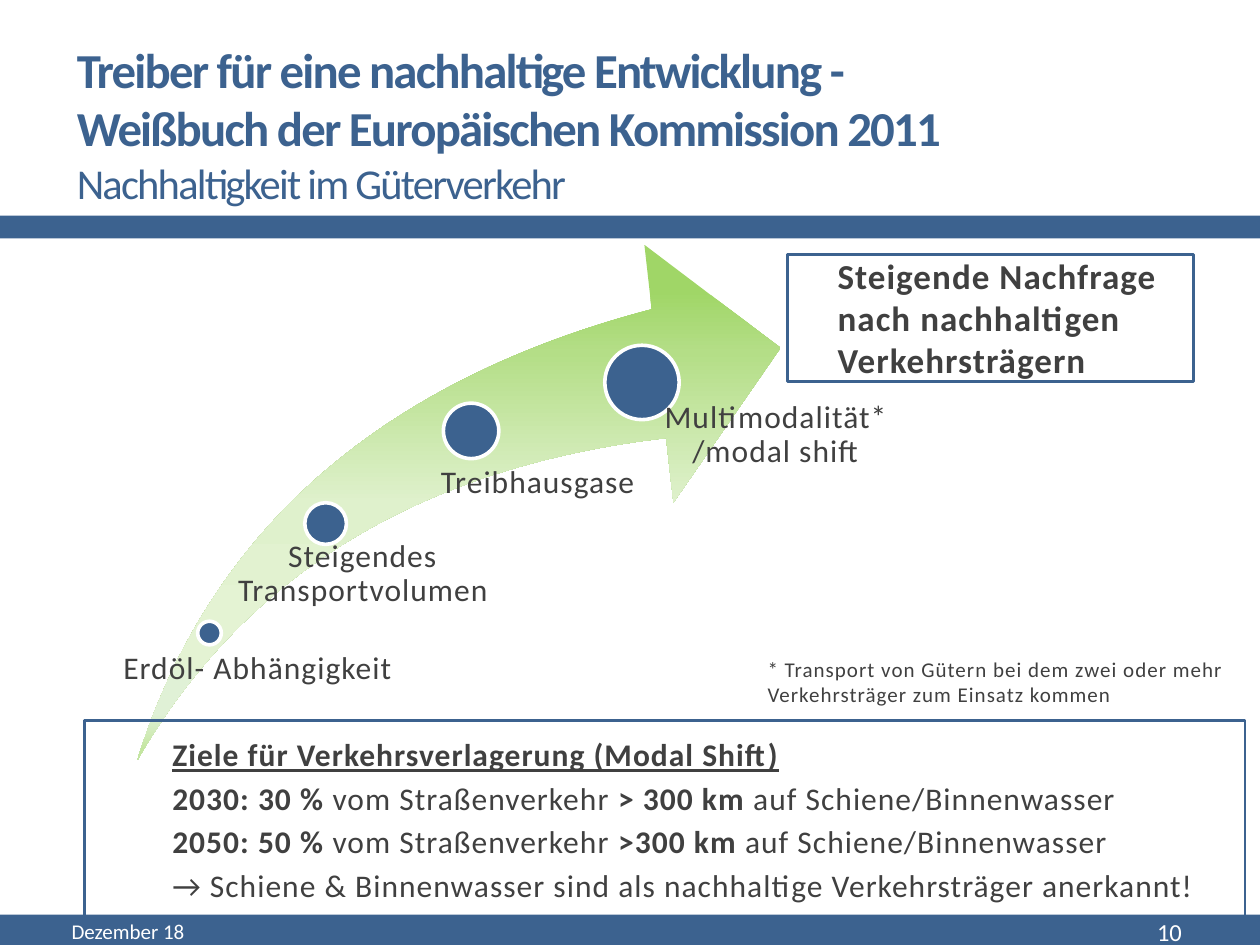
import pptx
import pptx.dml.color
import pptx.enum.shapes
import pptx.enum.text
import pptx.oxml
import pptx.oxml.ns
import pptx.util

Pt = pptx.util.Pt
RGBColor = pptx.dml.color.RGBColor
SHAPE = pptx.enum.shapes.MSO_SHAPE
ALIGN = pptx.enum.text.PP_ALIGN
ANCHOR = pptx.enum.text.MSO_ANCHOR

BLUE = RGBColor(0x3C, 0x62, 0x8F)
GREY = RGBColor(0x40, 0x40, 0x40)
WHITE = RGBColor(0xFF, 0xFF, 0xFF)
SWOOSH_STOPS = [
    (9, RGBColor(0xA0, 0xD6, 0x67)),
    (21, RGBColor(0xB4, 0xDE, 0x87)),
    (50, RGBColor(0xDF, 0xF1, 0xCC)),
    (74, RGBColor(0xE4, 0xF3, 0xD3)),
    (91, RGBColor(0xE0, 0xF1, 0xD6)),
    (98, RGBColor(0xC4, 0xE6, 0xA0)),
]

DRIVERS = [
    ((113, 355, 13.5), (63.4, 373, 224, 89), 7.2, ALIGN.LEFT, "Erdöl- Abhängigkeit"),
    ((174.2, 287.3, 23.8), (108.7, 308.9, 184.3, 172), 13, ALIGN.CENTER,
     "Steigendes Transportvolumen"),
    ((253.4, 230.4, 31.7), (219.6, 266.4, 163.4, 232.6), 16.6, ALIGN.CENTER,
     "Treibhausgase "),
    ((345.6, 197.3, 42.5), (345.6, 229, 173.5, 270), 22.3, ALIGN.CENTER,
     "Multimodalität*\n/modal shift"),
]

GOALS = [
    [("Ziele für Verkehrsverlagerung (Modal Shift)", {"bold": True, "underline": True})],
    [("2030: 30 % ", {"bold": True}), ("vom Straßenverkehr ", {}),
     ("> 300 km ", {"bold": True}), ("auf Schiene/Binnenwasser", {})],
    [("2050: 50 % ", {"bold": True}), ("vom Straßenverkehr ", {}),
     (">300 km ", {"bold": True}), ("auf Schiene/Binnenwasser", {})],
    [("→ Schiene & Binnenwasser sind als nachhaltige Verkehrsträger anerkannt!", {})],
]


def add_run(paragraph, text, size=18, color=GREY, bold=False, underline=False, tracking=0.6):
    for index, line in enumerate(text.split("\n")):
        if index:
            paragraph.add_line_break()
        if not line:
            continue
        run = paragraph.add_run()
        run.text = line
        run.font.name = "Calibri"
        run.font.size = Pt(size)
        run.font.bold = bold
        run.font.underline = underline
        run.font.color.rgb = color
        run.font._element.set("spc", str(round(tracking * 100)))


def write_text(frame, paragraphs, align=ALIGN.LEFT, anchor=ANCHOR.MIDDLE, level=0,
               indent=0, before=0, after=0, line_spacing=1.0, **font):
    frame.word_wrap = True
    frame.auto_size = pptx.enum.text.MSO_AUTO_SIZE.NONE
    frame.vertical_anchor = anchor
    for index, runs in enumerate(paragraphs):
        paragraph = frame.add_paragraph() if index else frame.paragraphs[0]
        paragraph.alignment = align
        paragraph.level = level
        paragraph.space_before = Pt(before)
        paragraph.space_after = Pt(after)
        paragraph.line_spacing = line_spacing
        properties = paragraph._p.get_or_add_pPr()
        properties.set("marL", str(Pt(indent)))
        properties.set("indent", "0")
        for text, emphasis in runs:
            add_run(paragraph, text, **{**font, **emphasis})


def add_text(slide, box, text, insets=None, **text_format):
    frame = slide.shapes.add_textbox(*map(Pt, box)).text_frame
    if insets:
        (frame.margin_left, frame.margin_top,
         frame.margin_right, frame.margin_bottom) = map(Pt, insets)
    write_text(frame, [[(text, {})]], **text_format)


def add_shape(slide, kind, box, fill=None, line=None, line_width=1.5):
    shape = slide.shapes.add_shape(kind, *map(Pt, box))
    shape.shadow.inherit = False
    if fill is None:
        shape.fill.background()
    else:
        shape.fill.solid()
        shape.fill.fore_color.rgb = fill
    if line is None:
        shape.line.fill.background()
    else:
        shape.line.color.rgb = line
        shape.line.width = Pt(line_width)
    return shape


def add_swoosh(slide, box):
    swoosh = add_shape(slide, SHAPE.SWOOSH_ARROW, box)
    swoosh.adjustments[0] = 0.25
    swoosh.adjustments[1] = 0.25
    swoosh.fill.gradient()
    swoosh.fill.gradient_angle = 270
    stops = swoosh._element.spPr.find(".//" + pptx.oxml.ns.qn("a:gsLst"))
    for stop in list(stops):
        stops.remove(stop)
    for position, color in SWOOSH_STOPS:
        stops.append(pptx.oxml.parse_xml(
            f'<a:gs {pptx.oxml.ns.nsdecls("a")} pos="{position * 1000}">'
            f'<a:srgbClr val="{color}"/></a:gs>'))


def add_driver(slide, dot, box, inset, align, label):
    left, top, diameter = dot
    add_shape(slide, SHAPE.OVAL, (left, top, diameter, diameter), BLUE, WHITE, 2.08)
    add_text(slide, box, label, insets=(inset, 0, 0, 0), align=align,
             anchor=ANCHOR.TOP, line_spacing=0.9, after=6.3)


def add_title(slide, box):
    title = slide.shapes.title
    title.left, title.top, title.width, title.height = map(Pt, box)
    heading = ("Treiber für eine nachhaltige Entwicklung -\n"
               "Weißbuch der Europäischen Kommission 2011\n")
    write_text(title.text_frame,
               [[(heading, {"size": 27.9, "bold": True}),
                 ("Nachhaltigkeit im Güterverkehr", {"size": 24.3})]],
               color=BLUE, tracking=-1)


def main():
    presentation = pptx.Presentation()
    presentation.slide_width = Pt(720)
    presentation.slide_height = Pt(540)
    slide = presentation.slides.add_slide(presentation.slide_layouts[5])

    add_shape(slide, SHAPE.RECTANGLE, (-3, 522.7, 731.5, 36), BLUE)
    add_shape(slide, SHAPE.RECTANGLE, (-1.5, 123.2, 728.6, 13), BLUE)
    add_title(slide, (36.7, 31.7, 692, 77.8))

    add_swoosh(slide, (78.5, 139.9, 367.5, 294.5))
    for driver in DRIVERS:
        add_driver(slide, *driver)

    demand = add_shape(slide, SHAPE.RECTANGLE, (450, 145.3, 232, 72.7), line=BLUE)
    write_text(demand.text_frame,
               [[("Steigende Nachfrage nach nachhaltigen Verkehrsträgern", {})]],
               level=1, indent=21.6, before=3.6, size=20, bold=True)

    add_text(slide, (431.5, 361.6, 286.5, 56),
             "* Transport von Gütern bei dem zwei oder mehr Verkehrsträger zum Einsatz kommen",
             before=2.2, size=12)
    add_text(slide, (33.8, 519.2, 228, 26), "Dezember 18",
             size=12, color=WHITE, tracking=0)
    add_text(slide, (598.3, 519.2, 84.2, 26), "10",
             align=ALIGN.RIGHT, size=14, color=WHITE, tracking=0)

    goals = add_shape(slide, SHAPE.RECTANGLE, (48.2, 411.8, 663.2, 113), line=BLUE)
    write_text(goals.text_frame, GOALS, level=2, indent=43.2, before=3.2)

    presentation.save("out.pptx")


if __name__ == "__main__":
    main()
